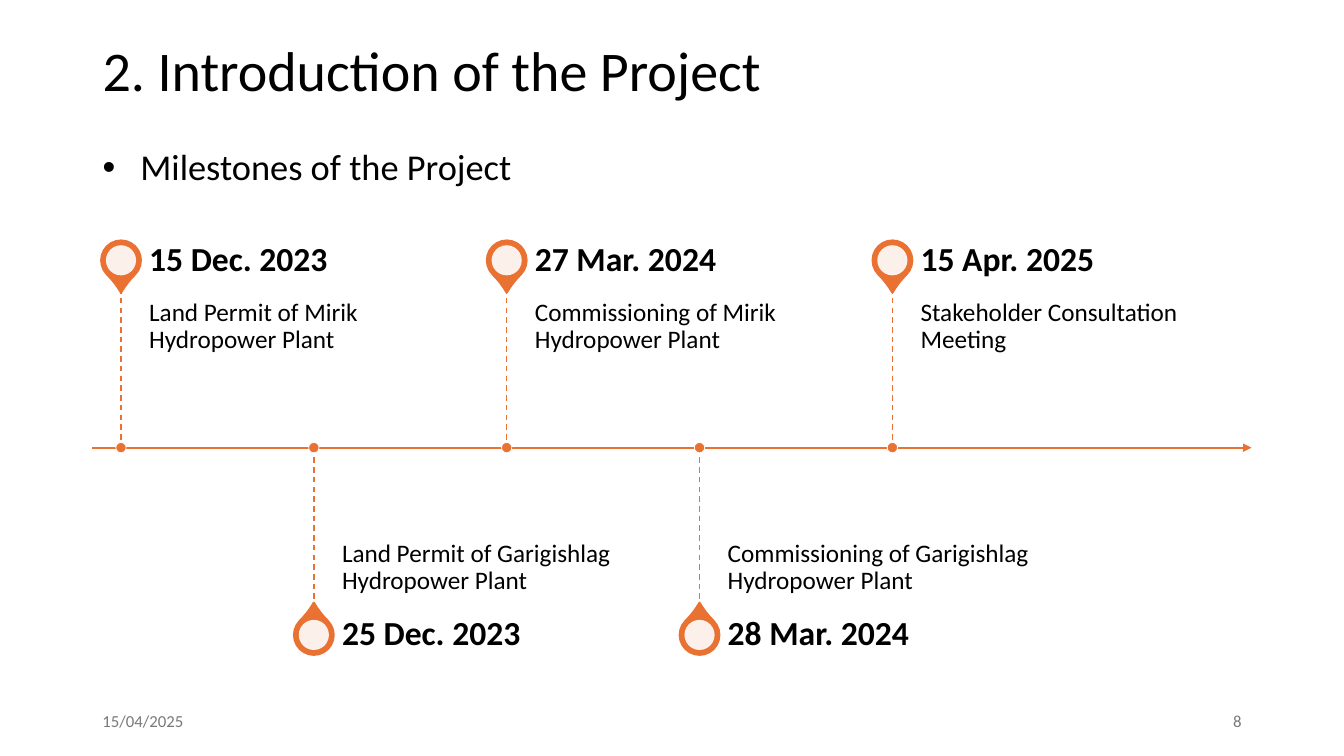
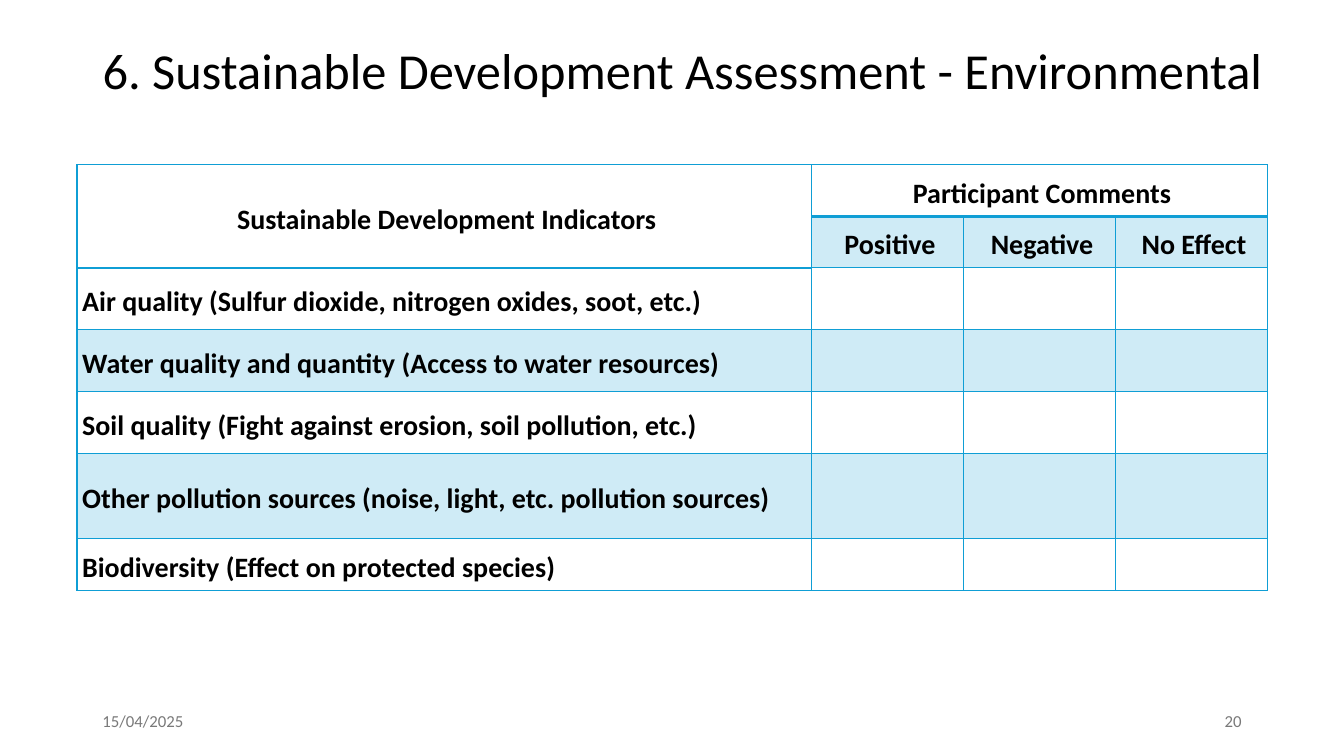
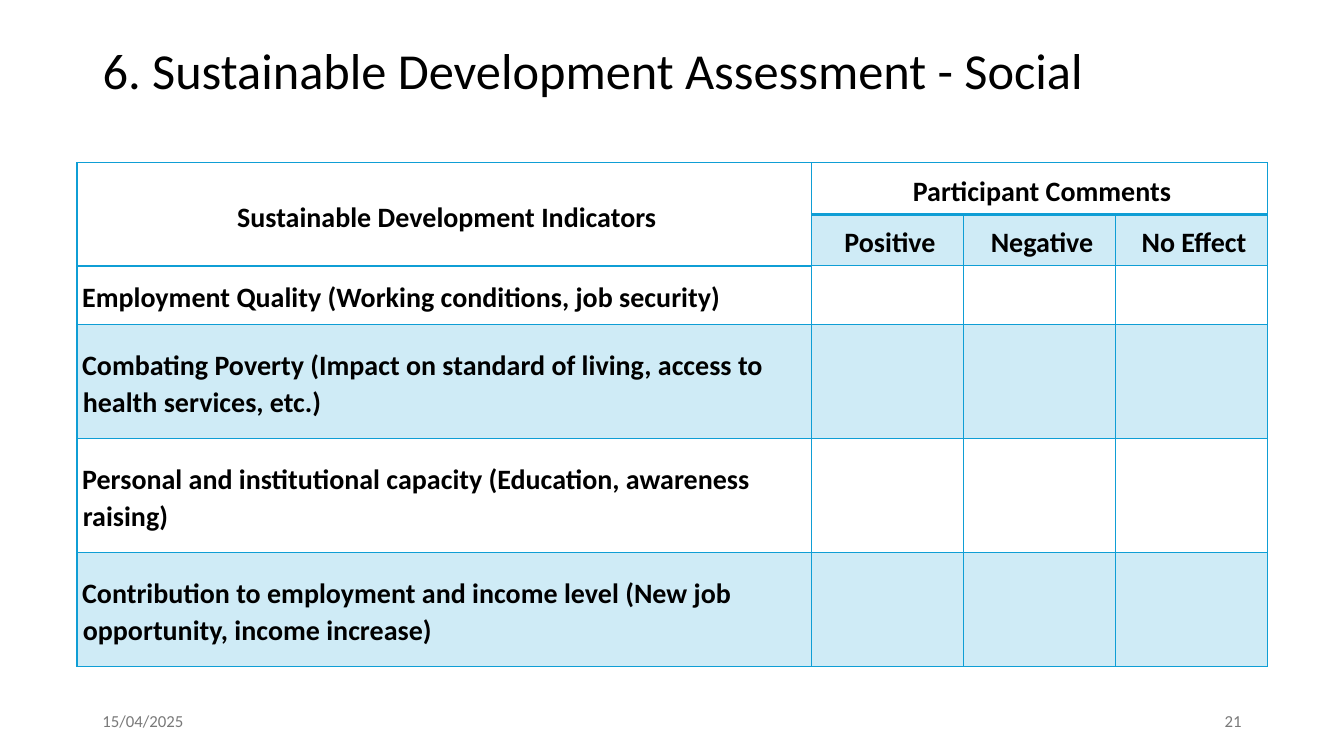
"""Build three slides on a hydropower project: a milestone timeline and two assessment tables."""
import pptx
import pptx.dml.color
import pptx.enum.dml
import pptx.enum.shapes
import pptx.enum.text
import pptx.oxml.ns
import pptx.util
from lxml import etree

Cm = pptx.util.Cm
Pt = pptx.util.Pt
qn = pptx.oxml.ns.qn
SHAPE = pptx.enum.shapes.MSO_SHAPE
ANCHOR = pptx.enum.text.MSO_ANCHOR
ALIGN = pptx.enum.text.PP_ALIGN

FONT = "Calibri"
BLACK, WHITE, GREY = "000000", "FFFFFF", "797979"
ORANGE, BLUE = "E97132", "0F9ED5"
DATE = "15/04/2025"
MARGIN, CONTENT_WIDTH = 2.33, 29.21

MILESTONES = [
    ("15 Dec. 2023", "Land Permit of Mirik Hydropower Plant"),
    ("25 Dec. 2023", "Land Permit of Garigishlag Hydropower Plant"),
    ("27 Mar. 2024", "Commissioning of Mirik Hydropower Plant"),
    ("28 Mar. 2024", "Commissioning of Garigishlag Hydropower Plant"),
    ("15 Apr. 2025", "Stakeholder Consultation Meeting"),
]
AXIS_Y, FIRST_X, STEP_X = 11.28, 3.05, 4.86
STEM, DATE_HEIGHT = 4.02, 1.4
PIN, DISC, DOT = 1, 0.76, 0.26
LABEL_GAP, LABEL_WIDTH = 0.71, 8.1

HEADINGS = ["Sustainable Development Indicators", "Participant Comments"]
OPINIONS = ["Positive", "Negative", "No Effect"]
COLUMN_WIDTHS = [18.51, 3.83, 3.83, 3.83]
HEADER_HEIGHT = 1.3
ASSESSMENTS = [
    {
        "title": "6. Sustainable Development Assessment - Environmental",
        "title_width": 30.05,
        "number": 20,
        "top": 4.15,
        "indicators": [
            ("Air quality (Sulfur dioxide, nitrogen oxides, soot, etc.)", 1.56),
            ("Water quality and quantity (Access to water resources)", 1.56),
            ("Soil quality (Fight against erosion, soil pollution, etc.)", 1.56),
            ("Other pollution sources (noise, light, etc. pollution sources)", 2.13),
            ("Biodiversity (Effect on protected species)", 1.32),
        ],
    },
    {
        "title": "6. Sustainable Development Assessment - Social",
        "title_width": CONTENT_WIDTH,
        "number": 21,
        "top": 4.1,
        "indicators": [
            ("Employment Quality (Working conditions, job security)", 1.48),
            ("Combating Poverty (Impact on standard of living, access to health services, etc.)", 2.87),
            ("Personal and institutional capacity (Education, awareness raising)", 2.87),
            ("Contribution to employment and income level (New job opportunity, income increase)", 2.87),
        ],
    },
]


def colour(value):
    return pptx.dml.color.RGBColor.from_string(value)


def box(left, top, width, height):
    return Cm(left), Cm(top), Cm(width), Cm(height)


def place(shape, *lengths):
    shape.left, shape.top, shape.width, shape.height = box(*lengths)


def set_fill(owner, element, value, opacity=100):
    owner.fill.solid()
    owner.fill.fore_color.rgb = colour(value)
    if opacity < 100:
        fill_colour = element.find(qn("a:solidFill")).find(qn("a:srgbClr"))
        etree.SubElement(fill_colour, qn("a:alpha"), val=str(opacity * 1000))


def write(frame, text, size, value=BLACK, bold=False, align=ALIGN.LEFT, spacing=1.0):
    frame.text = text
    paragraph = frame.paragraphs[0]
    paragraph.alignment = align
    paragraph.line_spacing = spacing
    paragraph.space_before = Pt(0)
    paragraph.font.name = FONT
    paragraph.font.size = Pt(size)
    paragraph.font.bold = bold
    paragraph.font.color.rgb = colour(value)
    return paragraph


def set_margins(owner, left, top, right, bottom):
    owner.margin_left, owner.margin_top = Cm(left), Cm(top)
    owner.margin_right, owner.margin_bottom = Cm(right), Cm(bottom)


def add_text(slide, area, text, size, anchor, margins=None, **style):
    frame = slide.shapes.add_textbox(*box(*area)).text_frame
    frame.word_wrap = True
    frame.vertical_anchor = anchor
    if margins:
        set_margins(frame, *margins)
    write(frame, text, size, **style)


def add_line(slide, start, end, width):
    line = slide.shapes.add_connector(
        pptx.enum.shapes.MSO_CONNECTOR.STRAIGHT, *(Cm(value) for value in start + end))
    line.line.color.rgb = colour(ORANGE)
    line.line.width = Pt(width)
    etree.SubElement(line._element.spPr, qn("a:effectLst"))
    return line


def add_mark(slide, preset, x, y, size, value, opacity=100, outline=None, width=0):
    mark = slide.shapes.add_shape(preset, *box(x - size / 2, y - size / 2, size, size))
    mark.shadow.inherit = False
    set_fill(mark, mark._element.spPr, value, opacity)
    if outline:
        mark.line.color.rgb = colour(outline)
        mark.line.width = Pt(width)
    else:
        mark.line.fill.background()
    return mark


def add_slide(presentation, layout, title, size, number, title_width=CONTENT_WIDTH):
    slide = presentation.slides.add_slide(presentation.slide_layouts[layout])
    place(slide.shapes.title, MARGIN, 0.51, title_width, 2.69)
    frame = slide.shapes.title.text_frame
    frame.auto_size = pptx.enum.text.MSO_AUTO_SIZE.NONE
    frame.vertical_anchor = ANCHOR.MIDDLE
    write(frame, title, size, spacing=0.9)
    footer_width = 7.62
    for left, text, align in [
        (MARGIN, DATE, ALIGN.LEFT),
        (MARGIN + CONTENT_WIDTH - footer_width, str(number), ALIGN.RIGHT),
    ]:
        add_text(slide, (left, 17.66, footer_width, 1.01), text, 12, ANCHOR.MIDDLE,
                 value=GREY, align=align)
    return slide


def add_milestone(slide, index, date, event):
    x = FIRST_X + index * STEP_X
    above = index % 2 == 0
    direction = -1 if above else 1
    tip_y = AXIS_Y + direction * STEM
    pin_y = tip_y + direction * DATE_HEIGHT / 2
    pin = add_mark(slide, SHAPE.TEAR, x, pin_y, PIN, ORANGE, outline=ORANGE, width=1.5)
    pin.adjustments[0] = 1.15
    pin.rotation = 135 if above else 315
    add_mark(slide, SHAPE.OVAL, x, pin_y, DISC, WHITE, opacity=90)
    left = x + LABEL_GAP
    add_text(slide, (left, min(tip_y, AXIS_Y), LABEL_WIDTH, STEM), event, 18,
             ANCHOR.TOP if above else ANCHOR.BOTTOM,
             (0, 0.3, 0.3, 0.48) if above else (0, 0.48, 0, 0.3), spacing=0.9)
    add_text(slide, (left, pin_y - DATE_HEIGHT / 2, LABEL_WIDTH, DATE_HEIGHT), date, 24,
             ANCHOR.MIDDLE, (0, 0, 0.43, 0), bold=True, spacing=0.9)
    stem = add_line(slide, (x, min(tip_y, AXIS_Y)), (x, max(tip_y, AXIS_Y)), 1)
    stem.line.dash_style = pptx.enum.dml.MSO_LINE.DASH
    add_mark(slide, SHAPE.OVAL, x, AXIS_Y, DOT, ORANGE, outline=WHITE, width=0.5)


def add_timeline_slide(presentation):
    slide = add_slide(presentation, 1, "2. Introduction of the Project", 40, 8)
    body = slide.placeholders[1]
    place(body, MARGIN, 3.63, CONTENT_WIDTH, 13.54)
    body.text_frame.auto_size = pptx.enum.text.MSO_AUTO_SIZE.NONE
    properties = body.text_frame.paragraphs[0]._p.get_or_add_pPr()
    properties.set("marL", "0")
    properties.set("indent", "0")
    etree.SubElement(properties, qn("a:buNone"))
    write(body.text_frame, "Milestones of the Project", 26, spacing=0.9)
    axis = add_line(slide, (MARGIN, AXIS_Y), (MARGIN + CONTENT_WIDTH, AXIS_Y), 1.5)
    etree.SubElement(axis.line._get_or_add_ln(), qn("a:tailEnd"), type="triangle")
    for index, milestone in enumerate(MILESTONES):
        add_milestone(slide, index, *milestone)


def set_borders(cell, bottom_width):
    properties = cell._tc.get_or_add_tcPr()
    for position, side in enumerate("LRTB"):
        width = Pt(bottom_width if side == "B" else 1)
        border = etree.Element(qn("a:ln" + side), w=str(width))
        fill = etree.SubElement(border, qn("a:solidFill"))
        etree.SubElement(fill, qn("a:srgbClr"), val=BLUE)
        properties.insert(position, border)


def add_assessment_slide(presentation, assessment):
    slide = add_slide(presentation, 5, assessment["title"], 36, assessment["number"],
                      assessment["title_width"])
    indicators = assessment["indicators"]
    rows = [HEADINGS, [""] + OPINIONS] + [[text] for text, height in indicators]
    heights = [HEADER_HEIGHT] * 2 + [height for text, height in indicators]
    table = slide.shapes.add_table(
        len(rows), len(COLUMN_WIDTHS),
        *box(1.94, assessment["top"], sum(COLUMN_WIDTHS), sum(heights))).table
    table.first_row = table.horz_banding = False
    for column, width in zip(table.columns, COLUMN_WIDTHS):
        column.width = Cm(width)
    table.cell(0, 0).merge(table.cell(1, 0))
    table.cell(0, 1).merge(table.cell(0, 3))
    for row_index, (texts, height) in enumerate(zip(rows, heights)):
        table.rows[row_index].height = Cm(height)
        for column_index in range(len(COLUMN_WIDTHS)):
            cell = table.cell(row_index, column_index)
            properties = cell._tc.get_or_add_tcPr()
            if row_index % 2 and not cell.is_spanned:
                set_fill(cell, properties, BLUE, 20)
            else:
                set_fill(cell, properties, WHITE)
            set_borders(cell, 1 if row_index else 2)
            if column_index < len(texts) and texts[column_index]:
                cell.vertical_anchor = ANCHOR.MIDDLE
                set_margins(cell, 0.13, 0.1, 0, 0)
                paragraph = write(cell.text_frame, texts[column_index], 20, bold=True, spacing=1.07,
                                  align=ALIGN.CENTER if row_index < 2 else ALIGN.LEFT)
                paragraph._p.pPr.set("marL", str(Pt(0.5)))
                paragraph._p.pPr.set("indent", str(-Pt(0.5)))


def main():
    presentation = pptx.Presentation()
    presentation.slide_width, presentation.slide_height = Cm(33.87), Cm(19.05)
    add_timeline_slide(presentation)
    for assessment in ASSESSMENTS:
        add_assessment_slide(presentation, assessment)
    presentation.save("out.pptx")


if __name__ == "__main__":
    main()
